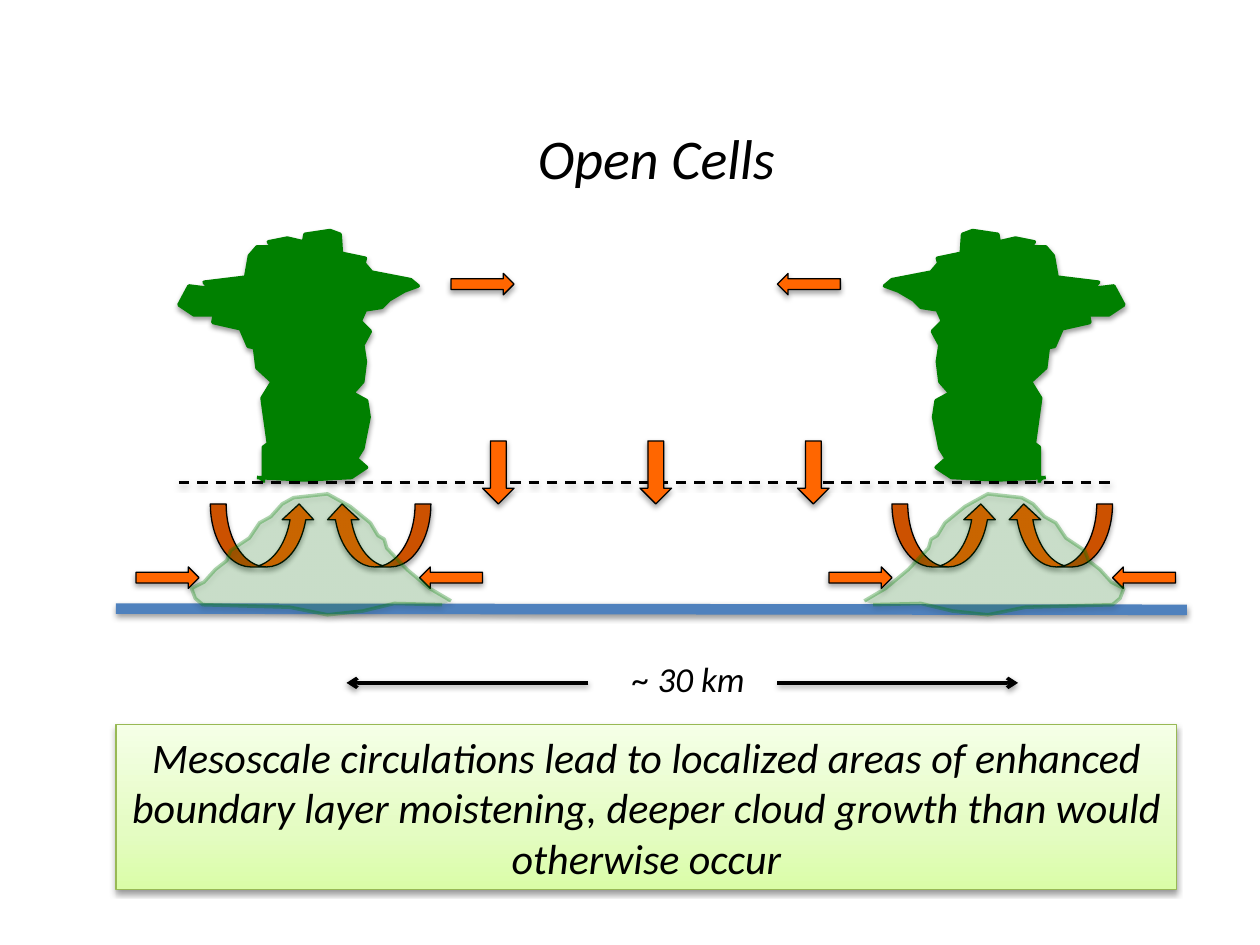
"""Build the Open Cells slide: two mirrored cloud towers with mesoscale circulation."""
from copy import deepcopy

from lxml import etree
from pptx import Presentation
from pptx.dml.color import RGBColor
from pptx.enum.dml import MSO_LINE
from pptx.enum.shapes import MSO_CONNECTOR, MSO_SHAPE
from pptx.enum.text import MSO_ANCHOR, PP_ALIGN
from pptx.oxml.ns import qn
from pptx.util import Inches, Pt

STRAIGHT = MSO_CONNECTOR.STRAIGHT
RIGHT, LEFT, DOWN = MSO_SHAPE.RIGHT_ARROW, MSO_SHAPE.LEFT_ARROW, MSO_SHAPE.DOWN_ARROW
CURVED, RECTANGLE = MSO_SHAPE.CURVED_UP_ARROW, MSO_SHAPE.RECTANGLE
DASH, MIDDLE, CENTER = MSO_LINE.DASH, MSO_ANCHOR.MIDDLE, PP_ALIGN.CENTER

BLACK = RGBColor(0x00, 0x00, 0x00)
GREEN = RGBColor(0x00, 0x80, 0x00)
ORANGE = RGBColor(0xFF, 0x66, 0x00)
BLUE = RGBColor(0x4F, 0x81, 0xBD)
OLIVE = RGBColor(0x98, 0xB9, 0x55)
LIME = RGBColor(0xDA, 0xFD, 0xA7)
PALE_LIME = RGBColor(0xE4, 0xFC, 0xC2)
MIST = RGBColor(0xF5, 0xFF, 0xE7)

TOWER_MIRROR_SUM = 10.34
MOUND_MIRROR_SUM = 10.44
INFLOW_GAP = 2.25
UPDRAFT_GAP = 0.92
SINKING_GAP = 1.25

tower_base = [(2.04, 3.79), (2.42, 3.81), (2.79, 3.79), (2.91, 3.71)]
right_stem = [(2.83, 3.64), (2.88, 3.56), (2.93, 3.31), (2.91, 3.18), (2.8, 3.12),
              (2.88, 3.03), (2.9, 2.87), (2.88, 2.74), (2.94, 2.63), (2.86, 2.55)]
right_anvil = [(2.9, 2.46), (3.03, 2.44), (3.09, 2.38), (3.21, 2.31), (3.32, 2.27),
               (3.26, 2.22), (2.95, 2.16)]
crown = [(2.89, 2.09), (2.9, 2.05), (2.71, 2.01), (2.7, 1.86), (2.62, 1.83), (2.42, 1.86),
         (2.41, 1.92), (2.28, 1.89), (2.13, 1.92), (2.16, 1.96), (2.04, 1.96), (1.98, 2.03)]
left_anvil = [(1.95, 2.2), (1.62, 2.24), (1.66, 2.29), (1.5, 2.27), (1.42, 2.42),
              (1.54, 2.5), (1.7, 2.5), (1.69, 2.56), (1.91, 2.61)]
left_stem = [(1.97, 2.75), (2.02, 2.76), (2.04, 2.92), (2.16, 3.03), (2.08, 3.16),
             (2.13, 3.52), (2.09, 3.55), (2.09, 3.83)]
tower = tower_base + right_stem + right_anvil + crown + left_anvil + left_stem

right_slope = [(3.58, 4.77), (3.41, 4.67), (3.23, 4.52), (3.07, 4.35), (3.05, 4.28),
               (3, 4.25), (2.94, 4.15), (2.78, 4.02)]
mound_top = [(2.6, 3.92), (2.33, 3.95), (2.24, 4)]
left_slope = [(2.15, 4.1), (2.06, 4.15), (1.98, 4.27), (1.83, 4.37), (1.8, 4.45),
              (1.71, 4.52), (1.62, 4.62), (1.52, 4.67)]
mound_base = [(1.55, 4.75), (1.61, 4.8), (2.3, 4.82), (2.6, 4.88), (2.88, 4.85),
              (3.13, 4.79), (3.51, 4.8)]
mound = right_slope + mound_top + left_slope + mound_base


def finish(part, line_color, width, fill_color=None, shadow_alpha=38, shadow_distance=20000):
    """Set fill and line, then add a soft shadow below."""
    if fill_color is not None:
        part.fill.solid()
        part.fill.fore_color.rgb = fill_color
    part.line.color.rgb = line_color
    part.line.width = Pt(width)
    effects = etree.SubElement(part._element.spPr, qn("a:effectLst"))
    shadow = etree.SubElement(effects, qn("a:outerShdw"), blurRad="40000",
                              dist=str(shadow_distance), dir="5400000", rotWithShape="0")
    color = etree.SubElement(shadow, qn("a:srgbClr"), val="000000")
    etree.SubElement(color, qn("a:alpha"), val=str(shadow_alpha * 1000))


def draw_pair(outline, mirror_sum, opacities=()):
    """Draw a green outline and its mirror image, with fill and line opacity in percent."""
    mirrored = [(mirror_sum - x, y) for x, y in outline]
    for side in (outline, mirrored):
        points = [(Inches(x), Inches(y)) for x, y in side]
        builder = shapes.build_freeform(*points[0])
        builder.add_line_segments(points[1:], close=False)
        cloud = builder.convert_to_shape()
        finish(cloud, GREEN, 2, GREEN)
        paints = cloud._element.spPr.findall(".//" + qn("a:solidFill"))
        for paint, opacity in zip(paints, opacities):
            etree.SubElement(paint[0], qn("a:alpha"), val=str(opacity * 1000))


prs = Presentation()
prs.slide_width, prs.slide_height = Inches(10), Inches(7.5)
shapes = prs.slides.add_slide(prs.slide_layouts[6]).shapes

ground = shapes.add_connector(STRAIGHT, Inches(0.92), Inches(4.83), Inches(9.42), Inches(4.84))
finish(ground, BLUE, 6)

draw_pair(tower, TOWER_MIRROR_SUM)

cloud_base = shapes.add_connector(STRAIGHT, Inches(1.42), Inches(3.83), Inches(8.83), Inches(3.83))
finish(cloud_base, BLACK, 1.5)
cloud_base.line.dash_style = DASH

arrow_sizes = {RIGHT: (0.5, 0.17), LEFT: (0.5, 0.17), DOWN: (0.25, 0.5), CURVED: (0.83, 0.5)}
flows = [(RIGHT, 3.58, 2.17, False), (LEFT, 6.17, 2.17, False)]
flows += [(DOWN, 3.83 + SINKING_GAP * i, 3.5, False) for i in range(3)]
for inflow_left, updraft_left in ((1.08, 1.67), (6.58, 7.08)):
    flows += [(RIGHT, inflow_left, 4.5, False),
              (LEFT, inflow_left + INFLOW_GAP, 4.5, False),
              (CURVED, updraft_left, 4, False),
              (CURVED, updraft_left + UPDRAFT_GAP, 4, True)]
for direction, left, top, flipped in flows:
    width, height = arrow_sizes[direction]
    flow = shapes.add_shape(direction, Inches(left), Inches(top), Inches(width), Inches(height))
    finish(flow, BLACK, 0.75, ORANGE, shadow_alpha=35, shadow_distance=23000)
    if flipped:
        flow._element.spPr.xfrm.set("flipH", "1")

draw_pair(mound, MOUND_MIRROR_SUM, opacities=(16, 31))

for inner_end, outer_end in ((6.17, 8.08), (4.67, 2.75)):
    distance = shapes.add_connector(
        STRAIGHT, Inches(inner_end), Inches(5.42), Inches(outer_end), Inches(5.42))
    finish(distance, BLACK, 2)
    etree.SubElement(distance.line._get_or_add_ln(), qn("a:tailEnd"), type="arrow")

spacing = shapes.add_textbox(Inches(4.92), Inches(5.17), Inches(1.5), Inches(0.44))
heading = shapes.add_textbox(Inches(4.17), Inches(0.93), Inches(3.5), Inches(0.64))

summary = shapes.add_shape(RECTANGLE, Inches(0.92), Inches(5.75), Inches(8.42), Inches(1.31))
summary.fill.gradient()
summary.fill.gradient_angle = 90
stops = summary._element.spPr.find(".//" + qn("a:gsLst"))
stops.insert(1, deepcopy(stops[0]))
shades = ((LIME, 0), (PALE_LIME, 0.35), (MIST, 1))
for stop, (shade, position) in zip(summary.fill.gradient_stops, shades):
    stop.color.rgb = shade
    stop.position = position
finish(summary, OLIVE, 0.75)
summary.text_frame.vertical_anchor = MIDDLE

for box, size, text in (
        (spacing, 20, "~ 30 km"),
        (heading, 32, "Open Cells"),
        (summary, 24, "Mesoscale circulations lead to localized areas of enhanced boundary "
                      "layer moistening, deeper cloud growth than would otherwise occur")):
    box.text_frame.word_wrap = True
    box.text_frame.text = text
    font = box.text_frame.paragraphs[0].runs[0].font
    font.name, font.size, font.italic = "Calibri", Pt(size), True
    font.color.rgb = BLACK
summary.text_frame.paragraphs[0].alignment = CENTER

prs.save("out.pptx")
